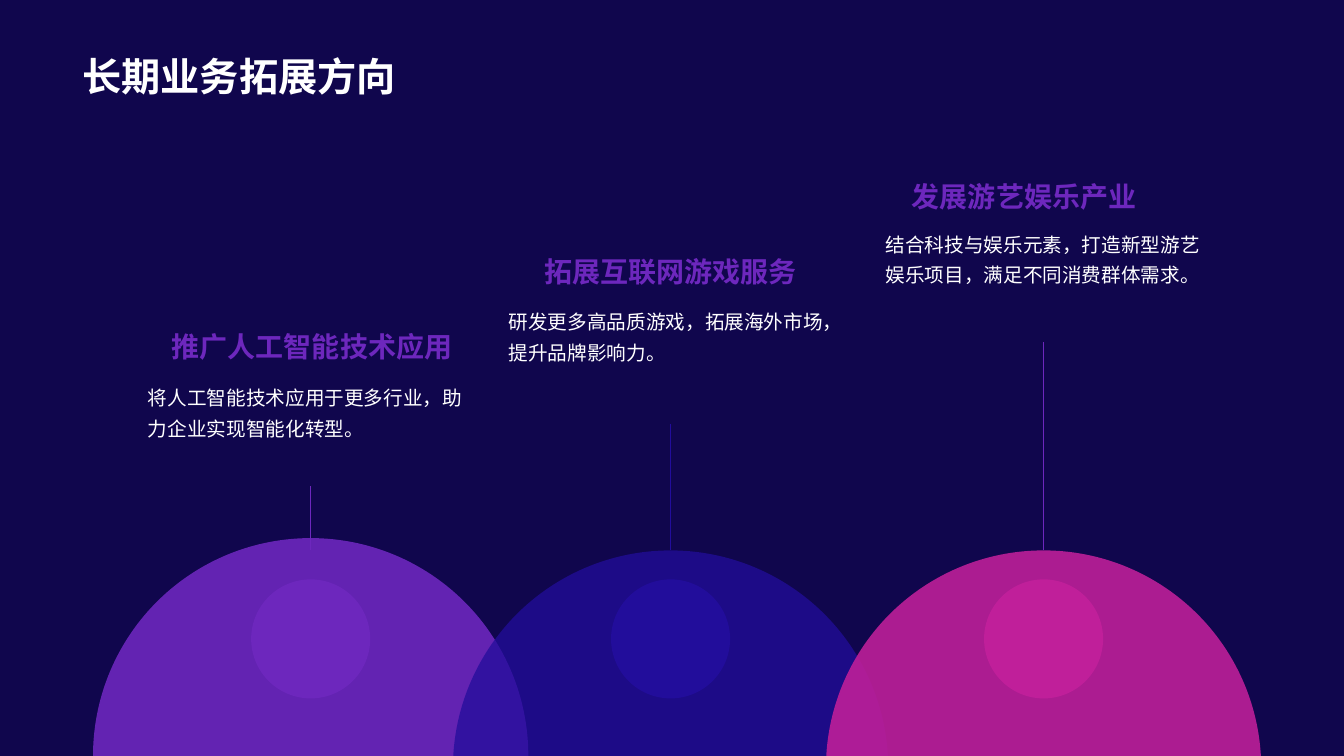
from dataclasses import dataclass

from lxml import etree
from pptx import Presentation
from pptx import util as u
from pptx.dml.color import RGBColor
from pptx.enum import shapes, text
from pptx.oxml import ns
from pptx.slide import Slide

FONT = "Noto Sans CJK JP"
COLORS = {
    "background": "10064D",
    "white": "FFFFFF",
    "purple": "6D27BD",
    "blue": "220D9B",
    "pink": "C01F9A",
}
DOME_SIZE = 10.97
DOT_SIZE = 3
DOT_TOP = 14.6
STEM_BOTTOM = 13.87

TITLE_STYLE = {"size": u.Pt(28), "bold": True}
HEADING_STYLE = {"size": u.Pt(20), "bold": True}
BODY_STYLE = {"size": u.Pt(14), "bold": False}
FITTED = {"auto_size": text.MSO_AUTO_SIZE.SHAPE_TO_FIT_TEXT}
PADDED = {
    "margin_left": u.Cm(0.3),
    "margin_right": u.Cm(0.3),
    "margin_top": u.Cm(0.15),
    "margin_bottom": u.Cm(0.15),
}


@dataclass(frozen=True)
class Box:
    left: float
    top: float
    width: float
    height: float


@dataclass(frozen=True)
class Direction:
    heading: str
    body: str
    center: float
    dome_top: float
    stem_top: float
    heading_box: Box
    body_box: Box
    color: str
    opacity: int
    stem_color: str


DIRECTIONS = [
    Direction(
        "推广人工智能技术应用",
        "将人工智能技术应用于更多行业，助力企业实现智能化转型。",
        7.83, 13.56, 12.24,
        Box(3.84, 8.15, 8.05, 0.97), Box(3.43, 9.4, 8.79, 2.69),
        "purple", 90, "purple",
    ),
    Direction(
        "拓展互联网游戏服务",
        "研发更多高品质游戏，拓展海外市场，提升品牌影响力。",
        16.9, 13.87, 10.69,
        Box(12.88, 6.27, 8.05, 0.97), Box(12.52, 7.49, 8.79, 2.9),
        "blue", 75, "blue",
    ),
    Direction(
        "发展游艺娱乐产业",
        "结合科技与娱乐元素，打造新型游艺娱乐项目，满足不同消费群体需求。",
        26.3, 13.87, 8.61,
        Box(22.28, 4.37, 7.06, 0.97), Box(22.02, 5.54, 8.53, 2.72),
        "pink", 89, "purple",
    ),
]


def rgb(name: str) -> RGBColor:
    return RGBColor.from_string(COLORS[name])


def set_values(target: object, values: dict) -> None:
    for name, value in values.items():
        setattr(target, name, value)


def add_text(slide: Slide, box: Box, wording: str, color: str,
             font_values: dict, frame_values: dict, paragraph_values: dict) -> None:
    shape = slide.shapes.add_textbox(
        u.Cm(box.left), u.Cm(box.top), u.Cm(box.width), u.Cm(box.height))
    frame = shape.text_frame
    set_values(frame, {"word_wrap": True, **frame_values})
    paragraph = frame.paragraphs[0]
    set_values(paragraph, paragraph_values)
    run = paragraph.add_run()
    run.text = wording
    set_values(run.font, {"name": FONT, **font_values})
    run.font.color.rgb = rgb(color)
    properties = run.font._element
    etree.SubElement(properties, ns.qn("a:ea"), typeface=FONT)


def add_circle(slide: Slide, center: float, top: float, size: float,
               color: str, opacity: int = 100) -> None:
    shape = slide.shapes.add_shape(
        shapes.MSO_SHAPE.OVAL,
        u.Cm(center - size / 2), u.Cm(top), u.Cm(size), u.Cm(size))
    shape.shadow.inherit = False
    shape.line.fill.background()
    shape.fill.solid()
    shape.fill.fore_color.rgb = rgb(color)
    if opacity < 100:
        fill_color = shape._element.spPr.find(ns.qn("a:solidFill"))[0]
        etree.SubElement(fill_color, ns.qn("a:alpha"), val=str(opacity * 1000))


def add_stem(slide: Slide, direction: Direction) -> None:
    connector = slide.shapes.add_connector(
        shapes.MSO_CONNECTOR.STRAIGHT,
        u.Cm(direction.center), u.Cm(STEM_BOTTOM),
        u.Cm(direction.center), u.Cm(direction.stem_top))
    connector.line.color.rgb = rgb(direction.stem_color)
    connector.line.width = u.Pt(0.75)
    etree.SubElement(connector._element.spPr, ns.qn("a:effectLst"))


def add_direction(slide: Slide, direction: Direction) -> None:
    add_circle(slide, direction.center, direction.dome_top, DOME_SIZE,
               direction.color, direction.opacity)
    add_stem(slide, direction)
    add_text(slide, direction.body_box, direction.body, "white",
             BODY_STYLE, PADDED, {"line_spacing": 1.3})
    add_text(slide, direction.heading_box, direction.heading, "purple",
             HEADING_STYLE, {**PADDED, **FITTED},
             {"alignment": text.PP_ALIGN.CENTER})


def main() -> None:
    presentation = Presentation()
    presentation.slide_width = u.Cm(33.87)
    presentation.slide_height = u.Cm(19.05)
    slide = presentation.slides.add_slide(presentation.slide_layouts[6])
    slide.background.fill.solid()
    slide.background.fill.fore_color.rgb = rgb("background")

    for direction in DIRECTIONS:
        add_direction(slide, direction)
    add_text(slide, Box(1.83, 1.17, 28.73, 1.45), "长期业务拓展方向", "white",
             TITLE_STYLE,
             {**FITTED, "vertical_anchor": text.MSO_ANCHOR.BOTTOM}, {})
    for direction in DIRECTIONS:
        add_circle(slide, direction.center, DOT_TOP, DOT_SIZE, direction.color)

    presentation.save("out.pptx")


if __name__ == "__main__":
    main()
